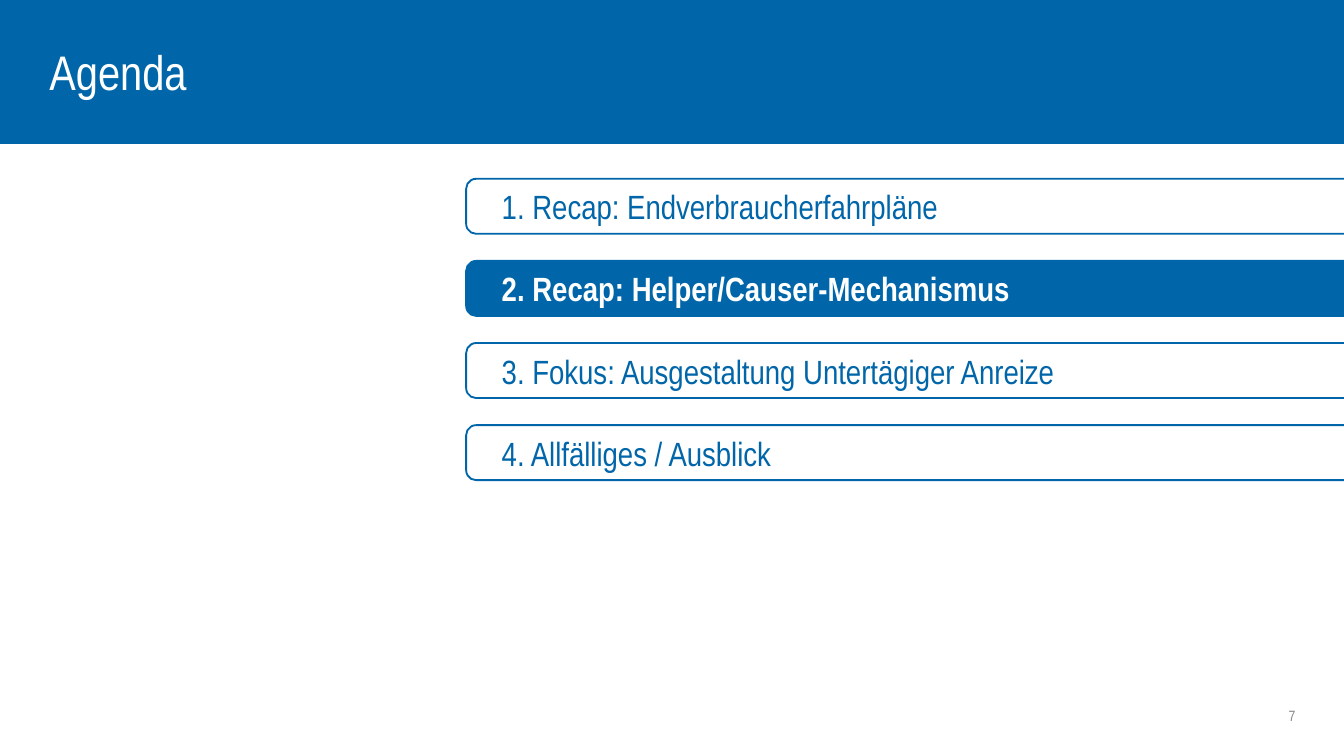
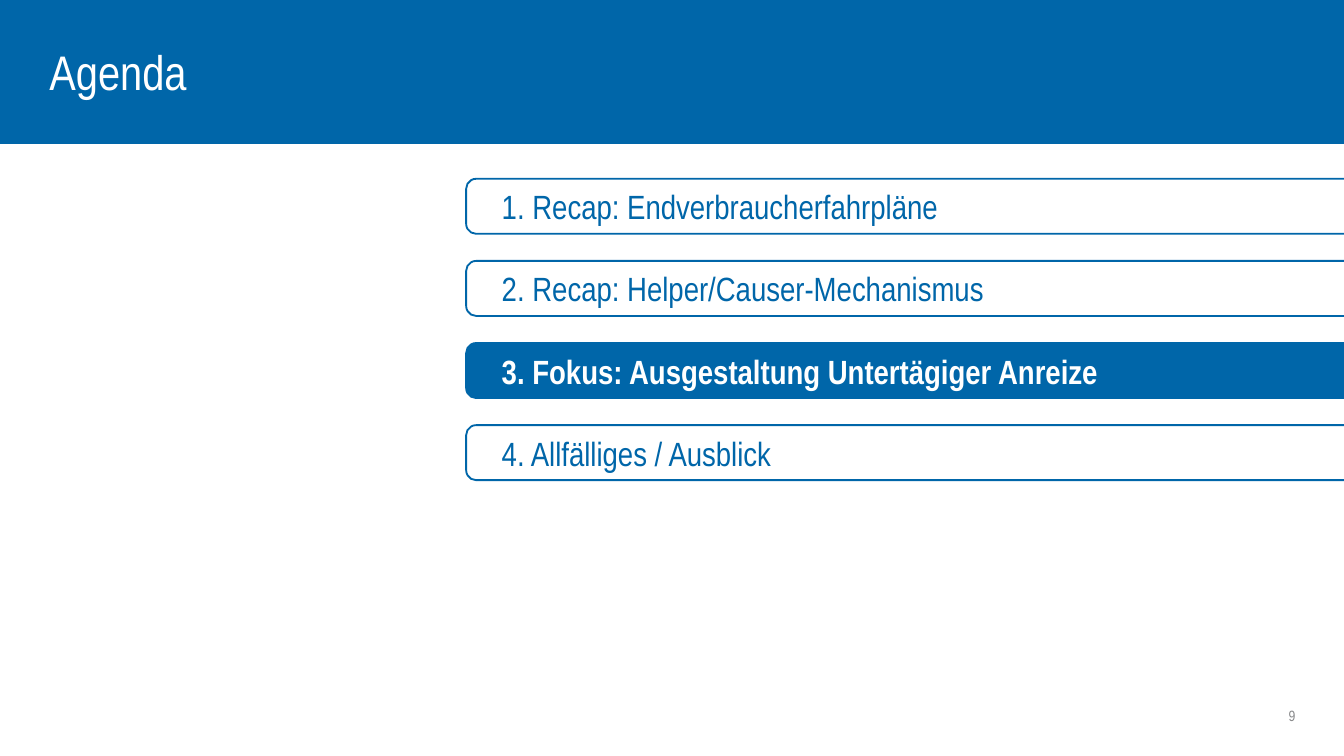
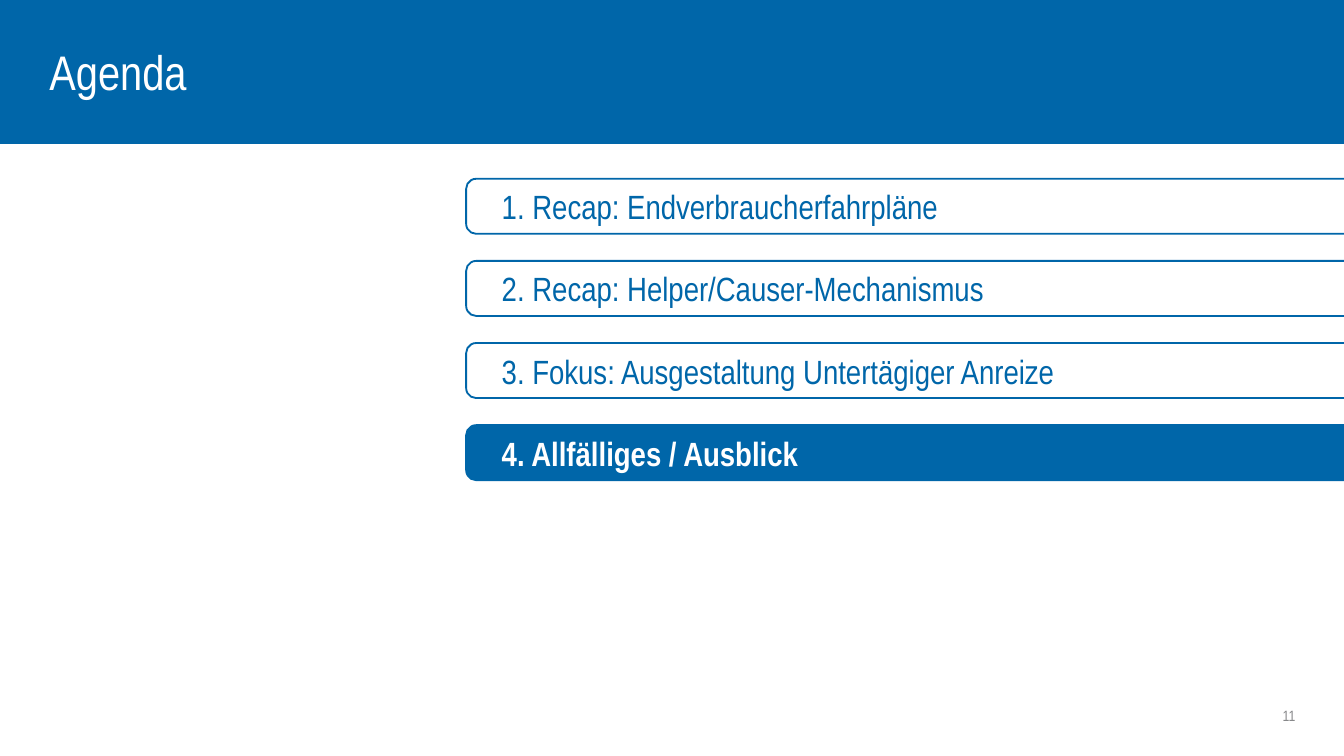
import pptx
import pptx.dml.color
import pptx.enum.shapes
import pptx.enum.text
import pptx.util

RGBColor = pptx.dml.color.RGBColor
Shape = pptx.enum.shapes.MSO_SHAPE
Align = pptx.enum.text.PP_ALIGN

BLUE = RGBColor(0x00, 0x66, 0xA9)
WHITE = RGBColor(0xFF, 0xFF, 0xFF)
GREY = RGBColor(0x87, 0x88, 0x8A)
FONT = "Arial Narrow"

EMU_PER_PX = 6350  # 144 px to the inch
SLIDE_WIDTH, SLIDE_HEIGHT = 1440, 810
BAND_HEIGHT = 153

ENTRY_LEFT, ENTRY_WIDTH, ENTRY_HEIGHT = 500, 942, 59
FIRST_ENTRY_TOP, ENTRY_PITCH = 192, 88

TOPICS = [
    "1. Recap: Endverbraucherfahrpläne",
    "2. Recap: Helper/Causer-Mechanismus",
    "3. Fokus: Ausgestaltung Untertägiger Anreize",
    "4. Allfälliges / Ausblick",
]
# Page number and index of the highlighted topic
AGENDA_PAGES = [(7, 1), (9, 2), (11, 3)]


def px(*lengths):
    return [pptx.util.Emu(length * EMU_PER_PX) for length in lengths]


class AgendaDeck:
    def __init__(self):
        self.deck = pptx.Presentation()
        self.deck.slide_width, self.deck.slide_height = px(SLIDE_WIDTH, SLIDE_HEIGHT)
        self.page = None

    def add_page(self, title, number):
        self.page = self.deck.slides.add_slide(self.deck.slide_layouts[6])
        self.add_shape(Shape.RECTANGLE, (0, 0, SLIDE_WIDTH, BAND_HEIGHT), filled=True)
        self.add_text((53, 48, 1045, 56), title, size=26, color=WHITE)
        self.add_text((1218, 752, 170, 29), str(number), Align.RIGHT, size=8, color=GREY)

    def add_shape(self, kind, bounds, filled):
        shape = self.page.shapes.add_shape(kind, *px(*bounds))
        shape.shadow.inherit = False
        if filled:
            shape.fill.solid()
            shape.fill.fore_color.rgb = BLUE
        else:
            shape.fill.background()
        shape.line.color.rgb = BLUE
        shape.line.width = pptx.util.Pt(1)
        return shape

    def add_text(self, bounds, text, align=Align.LEFT, **style):
        box = self.page.shapes.add_textbox(*px(*bounds))
        self.fill_frame(box.text_frame, text, align, **style)

    def fill_frame(self, frame, text, align, size, color, bold=False, insets=(0, 0, 0, 0)):
        """Put styled text in a frame; insets run left, top, right, bottom."""
        frame.word_wrap = True
        frame.vertical_anchor = pptx.enum.text.MSO_ANCHOR.MIDDLE
        for side, inset in zip(("left", "top", "right", "bottom"), px(*insets)):
            setattr(frame, f"margin_{side}", inset)
        para = frame.paragraphs[0]
        para.alignment = align
        span = para.add_run()
        span.text = text
        font_values = {"name": FONT, "size": pptx.util.Pt(size), "bold": bold}
        for name, value in font_values.items():
            setattr(span.font, name, value)
        span.font.color.rgb = color

    def add_entry(self, row, topic, active):
        """Draw a bar with rounded left corners: a tab turned on its side."""
        left = ENTRY_LEFT + (ENTRY_WIDTH - ENTRY_HEIGHT) // 2
        middle = FIRST_ENTRY_TOP + row * ENTRY_PITCH + ENTRY_HEIGHT // 2
        bounds = (left, middle - ENTRY_WIDTH // 2, ENTRY_HEIGHT, ENTRY_WIDTH)
        entry = self.add_shape(Shape.ROUND_2_SAME_RECTANGLE, bounds, active)
        entry.rotation = 270
        entry.adjustments[0] = 0.18
        entry.adjustments[1] = 0
        self.fill_frame(entry.text_frame, topic, Align.LEFT, size=18,
                        color=WHITE if active else BLUE, bold=active, insets=(0, 35, 0, 7))
        # Vertical text cancels the rotation of the shape
        entry.text_frame._txBody.bodyPr.set("vert", "vert")


def main():
    agenda = AgendaDeck()
    for number, active_row in AGENDA_PAGES:
        agenda.add_page("Agenda", number)
        for row, topic in enumerate(TOPICS):
            agenda.add_entry(row, topic, active=row == active_row)
    agenda.deck.save("out.pptx")


if __name__ == "__main__":
    main()
